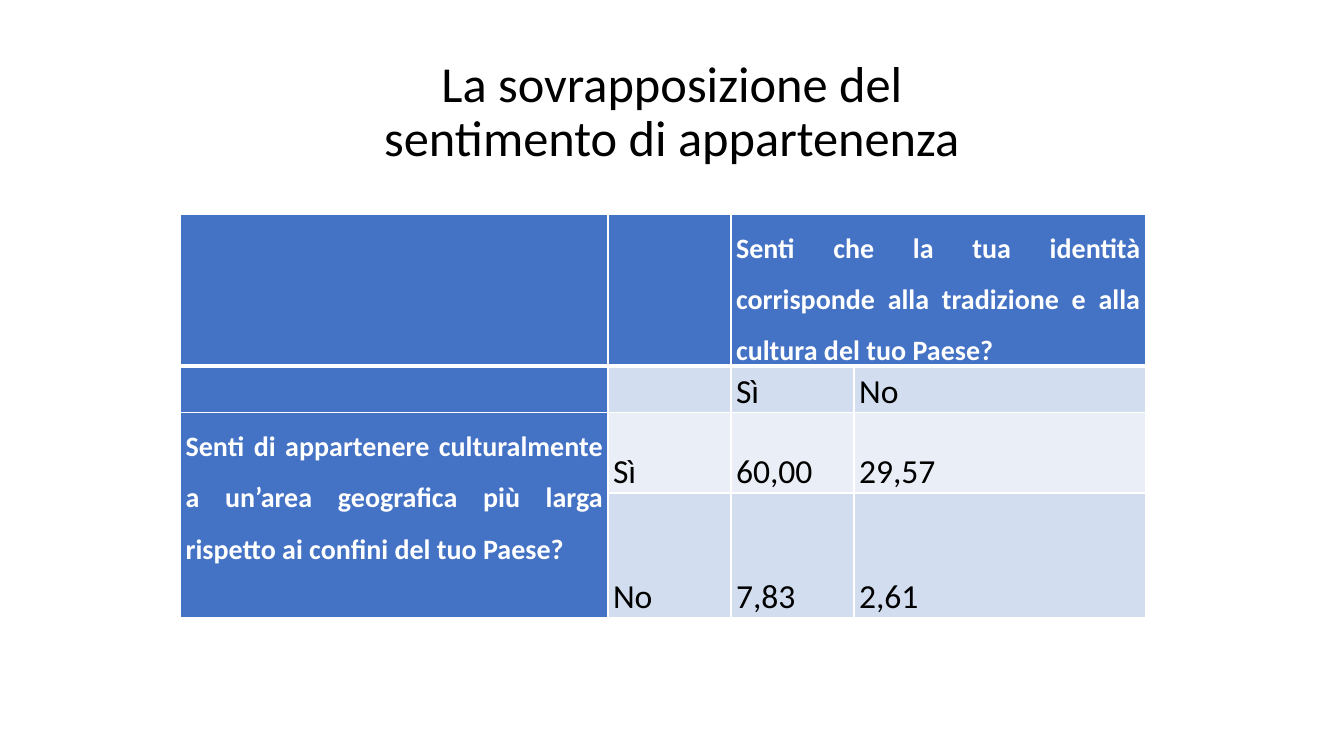
from lxml.etree import SubElement
from pptx import Presentation
from pptx.dml.color import RGBColor
from pptx.enum.text import MSO_ANCHOR, PP_ALIGN
from pptx.oxml.ns import qn
from pptx.util import Pt

COLORS = {
    "text": "000000",
    "white": "FFFFFF",
    "header": "4472C4",
    "band_dark": "D2DEEF",
    "band_light": "EAEFF7",
}
FONT = "Calibri"
TITLE = "La sovrapposizione del\vsentimento di appartenenza"
COLUMN_WIDTHS = [305.3, 87.9, 87.9, 208.2]
ROW_HEIGHTS = [108.5, 33, 57.6, 89.1]
ANSWERS = [
    ["", "", "Senti che la tua identità corrisponde alla tradizione "
             "e alla cultura del tuo Paese?", ""],
    ["", "", "Sì", "No"],
    ["Senti di appartenere culturalmente a un’area geografica più larga "
     "rispetto ai confini del tuo Paese?", "Sì", "60,00", "29,57"],
    ["", "No", "7,83", "2,61"],
]


def format_paragraph(paragraph, size, color, bold, alignment, line_spacing):
    paragraph.alignment = alignment
    paragraph.line_spacing = line_spacing
    for run in paragraph.runs:
        run.font.name = FONT
        run.font.size = Pt(size)
        run.font.bold = bold
        run.font.color.rgb = RGBColor.from_string(COLORS[color])


def add_title(slide, left, top, width, height):
    box = slide.shapes.add_textbox(Pt(left), Pt(top), Pt(width), Pt(height))
    frame = box.text_frame
    frame.word_wrap = True
    frame.vertical_anchor = MSO_ANCHOR.MIDDLE
    frame.text = TITLE
    format_paragraph(frame.paragraphs[0], 36, "text", False, PP_ALIGN.CENTER, 0.9)


def set_borders(cell, top, bottom):
    """Draw white cell borders; call before the fill, as the schema orders them."""
    properties = cell._tc.get_or_add_tcPr()
    for side, width in (("L", 1), ("R", 1), ("T", top), ("B", bottom)):
        line = SubElement(properties, qn(f"a:ln{side}"), w=str(Pt(width)))
        fill = SubElement(line, qn("a:solidFill"))
        SubElement(fill, qn("a:srgbClr"), val=COLORS["white"])


def style_cell(cell, row, column):
    is_header = row == 0 or column == 0
    set_borders(cell, top=3 if row == 1 else 1, bottom=3 if row == 0 else 1)
    band = "band_dark" if row % 2 else "band_light"
    cell.fill.solid()
    cell.fill.fore_color.rgb = RGBColor.from_string(COLORS["header" if is_header else band])
    if not ANSWERS[row][column]:
        return
    cell.margin_left = cell.margin_right = Pt(3.6)
    cell.margin_top = cell.margin_bottom = 0
    cell.vertical_anchor = MSO_ANCHOR.TOP if column == 0 else MSO_ANCHOR.BOTTOM
    cell.text_frame.text = ANSWERS[row][column]
    paragraph = cell.text_frame.paragraphs[0]
    if is_header:
        format_paragraph(paragraph, 20, "white", True, PP_ALIGN.JUSTIFY, 1.5)
    else:
        format_paragraph(paragraph, 24, "text", False, PP_ALIGN.LEFT, 1.07)


def add_answer_table(slide, left, top):
    table = slide.shapes.add_table(
        len(ROW_HEIGHTS), len(COLUMN_WIDTHS), Pt(left), Pt(top),
        Pt(sum(COLUMN_WIDTHS)), Pt(sum(ROW_HEIGHTS))).table
    for column, width in zip(table.columns, COLUMN_WIDTHS):
        column.width = Pt(width)
    for row, height in zip(table.rows, ROW_HEIGHTS):
        row.height = Pt(height)
    table.cell(0, 2).merge(table.cell(0, 3))
    table.cell(2, 0).merge(table.cell(3, 0))
    for row in range(len(ROW_HEIGHTS)):
        for column in range(len(COLUMN_WIDTHS)):
            style_cell(table.cell(row, column), row, column)


def main():
    presentation = Presentation()
    presentation.slide_width = Pt(960)
    presentation.slide_height = Pt(540)
    slide = presentation.slides.add_slide(presentation.slide_layouts[6])
    add_title(slide, 66, 28.75, 828, 104.4)
    add_answer_table(slide, 129, 153)
    presentation.save("out.pptx")


if __name__ == "__main__":
    main()
